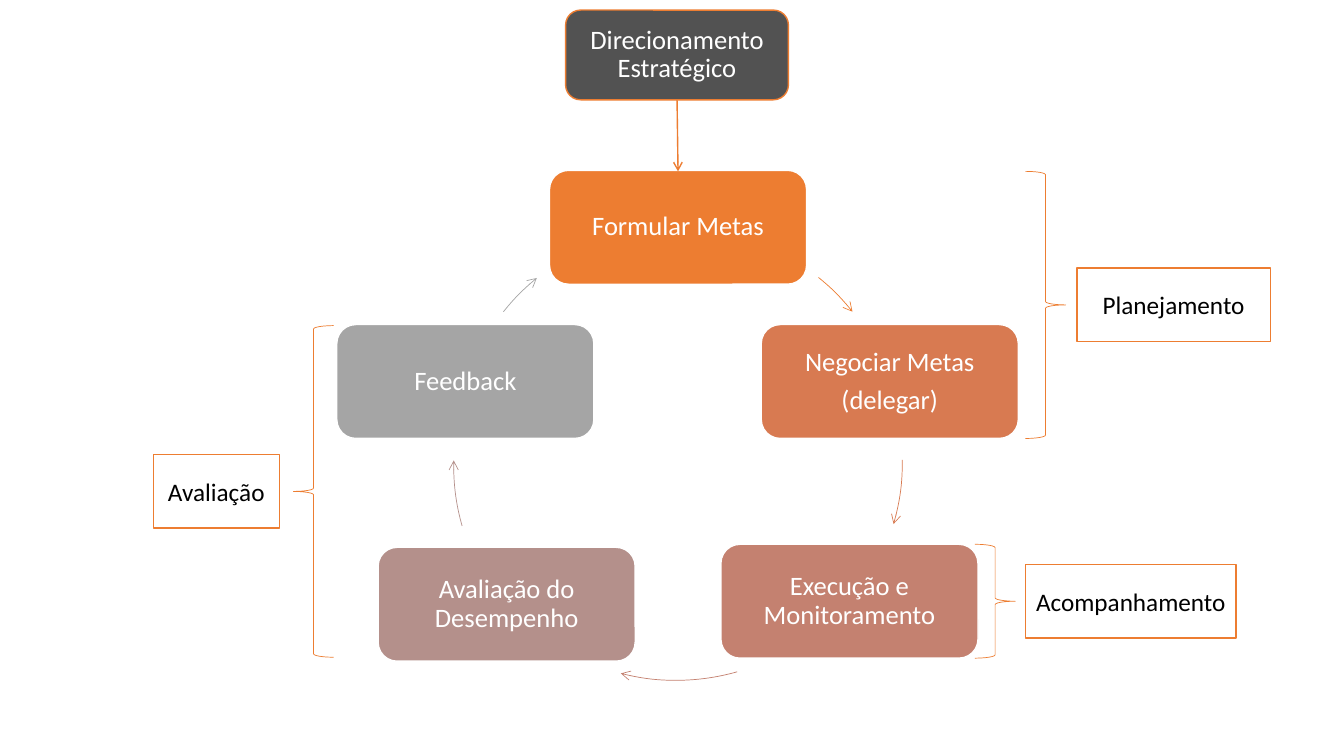
from lxml import etree
from pptx import Presentation
from pptx.dml.color import RGBColor
from pptx.enum.shapes import MSO_CONNECTOR, MSO_SHAPE
from pptx.enum.text import MSO_ANCHOR, PP_ALIGN
from pptx.oxml.ns import qn
from pptx.util import Inches, Pt

WHITE = RGBColor(0xFF, 0xFF, 0xFF)
BLACK = RGBColor(0x00, 0x00, 0x00)
ORANGE = RGBColor(0xED, 0x7D, 0x31)
COPPER = RGBColor(0xD8, 0x7A, 0x51)
TERRACOTTA = RGBColor(0xC4, 0x81, 0x70)
MAUVE = RGBColor(0xB4, 0x90, 0x8B)
GREY = RGBColor(0xA5, 0xA5, 0xA5)
CHARCOAL = RGBColor(0x52, 0x52, 0x52)

STEP_WIDTH, STEP_HEIGHT = 2.55, 1.13
ORBIT = 4.43
BRACE_WIDTH = 0.4
LABEL_HEIGHT = 0.73

STEPS = [
    (["Formular Metas"], ORANGE, (2.11, 0), (1.17, 0.57), (309, 321.4)),
    (["Negociar Metas", "(delegar)"], COPPER, (4.21, 1.53), (1.18, 0.68), (359.4, 16.1)),
    (["Execução e Monitoramento"], TERRACOTTA, (3.81, 3.71), (1.15, 0.63), (74.1, 104.3)),
    (["Avaliação do Desempenho"], MAUVE, (0.41, 3.74), (1.16, 0.71), (164.2, 181.2)),
    (["Feedback"], GREY, (0, 1.53), (1.17, 0.57), (218.6, 230.8)),
]

PHASES = [
    ("Planejamento", (10.17, 1.7, 2.43, 2.65), 1.92, False),
    ("Acompanhamento", (9.67, 5.4, 2.59, 1.13), 2.09, False),
    ("Avaliação", (1.52, 3.23, 1.79, 3.29), 1.25, True),
]


def add_form(slide, preset, box, line, weight, fill=None):
    form = slide.shapes.add_shape(preset, *map(Inches, box))
    form.shadow.inherit = False
    if fill is None:
        form.fill.background()
    else:
        form.fill.solid()
        form.fill.fore_color.rgb = fill
    form.line.color.rgb = line
    form.line.width = Pt(weight)
    return form


def add_arrowhead(stroke):
    etree.SubElement(stroke.line._get_or_add_ln(), qn("a:tailEnd"), type="arrow")


def write(form, lines, size, color):
    frame = form.text_frame
    frame.text = "\n".join(lines)
    frame.word_wrap = True
    frame.vertical_anchor = MSO_ANCHOR.MIDDLE
    for paragraph in frame.paragraphs:
        paragraph.alignment = PP_ALIGN.CENTER
        paragraph.font.name = "Calibri"
        paragraph.font.size = Pt(size)
        paragraph.font.color.rgb = color
    return frame


def add_step(slide, box, lines, fill, outline):
    step = add_form(slide, MSO_SHAPE.ROUNDED_RECTANGLE, box, outline, 1, fill)
    frame = write(step, lines, 19, WHITE)
    frame.margin_left = frame.margin_right = Inches(0.08)
    frame.margin_top = frame.margin_bottom = Inches(0.08)
    for paragraph in frame.paragraphs:
        paragraph.line_spacing = 0.9
        paragraph.space_after = Pt(6.65)


def add_cycle(slide, left, top):
    for lines, color, (x, y), (orbit_x, orbit_y), angles in STEPS:
        add_step(slide, (left + x, top + y, STEP_WIDTH, STEP_HEIGHT), lines, color, WHITE)
        orbit_box = (left + orbit_x, top + orbit_y, ORBIT, ORBIT)
        arc = add_form(slide, MSO_SHAPE.ARC, orbit_box, color, 0.5)
        for index, degrees in enumerate(angles):
            arc.adjustments[index] = degrees * 0.6
        add_arrowhead(arc)


def add_direction(slide, left, top, width, height):
    box = (left, top, width, height)
    add_step(slide, box, ["Direcionamento Estratégico"], CHARCOAL, ORANGE)
    middle, bottom = left + width / 2, top + height
    ends = (middle, bottom, middle + 0.01, bottom + 0.71)
    arrow = slide.shapes.add_connector(MSO_CONNECTOR.STRAIGHT, *map(Inches, ends))
    arrow.line.color.rgb = ORANGE
    arrow.line.width = Pt(1)
    add_arrowhead(arrow)
    etree.SubElement(arrow._element.spPr, qn("a:effectLst"))


def add_phase(slide, name, box, label_width, opens_right):
    left, top, width, height = box
    far_brace, far_label = left + width - BRACE_WIDTH, left + width - label_width
    brace_left, label_left = (far_brace, left) if opens_right else (left, far_label)
    brace_box = (brace_left, top, BRACE_WIDTH, height)
    brace = add_form(slide, MSO_SHAPE.RIGHT_BRACE, brace_box, ORANGE, 0.5)
    brace.rotation = 180 if opens_right else 0
    label_top = top + (height - LABEL_HEIGHT) / 2
    label_box = (label_left, label_top, label_width, LABEL_HEIGHT)
    label = add_form(slide, MSO_SHAPE.RECTANGLE, label_box, ORANGE, 1, WHITE)
    write(label, [name], 18, BLACK).word_wrap = False


def main():
    deck = Presentation()
    deck.slide_width, deck.slide_height = Inches(13.33), Inches(7.5)
    slide = deck.slides.add_slide(deck.slide_layouts[6])
    add_cycle(slide, 3.34, 1.69)
    add_direction(slide, 5.61, 0.1, 2.21, 0.89)
    for phase in PHASES:
        add_phase(slide, *phase)
    deck.save("out.pptx")


if __name__ == "__main__":
    main()
